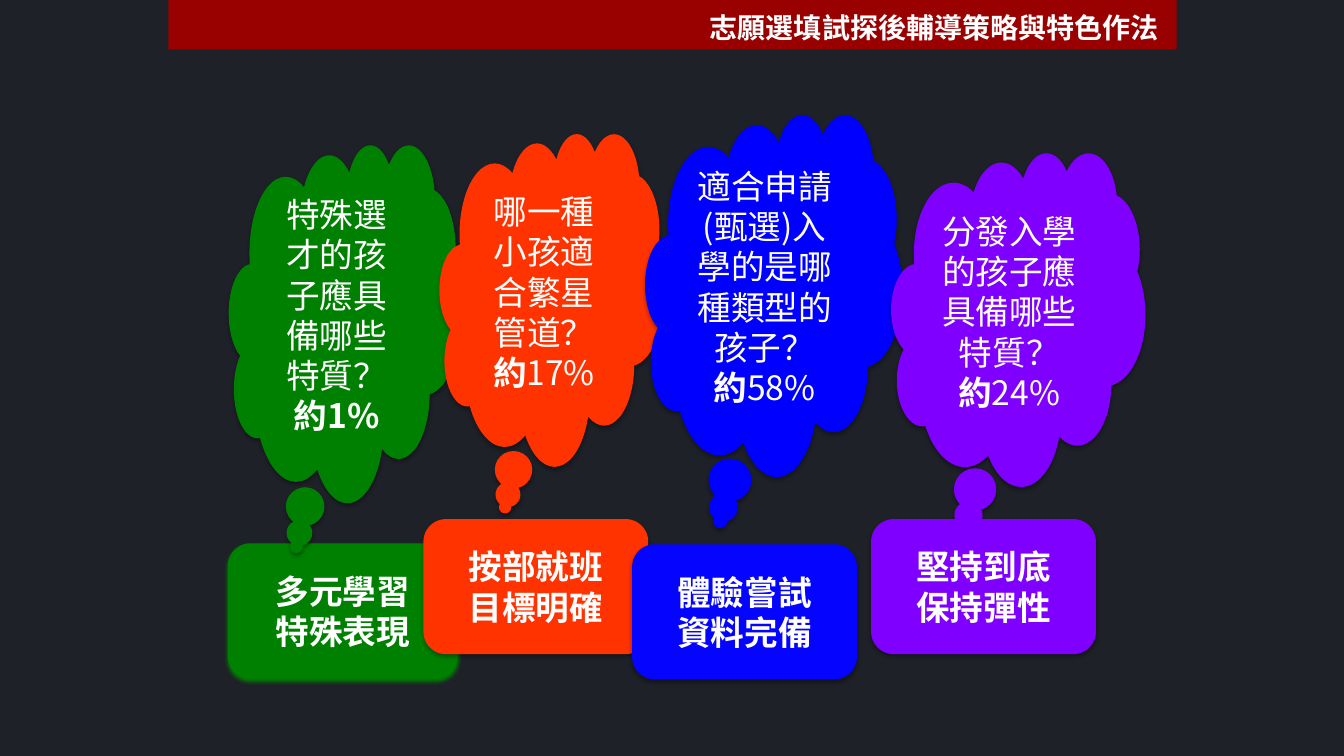
from pptx import Presentation
from pptx.dml.color import RGBColor
from pptx.enum.shapes import MSO_SHAPE
from pptx.enum.text import MSO_ANCHOR, MSO_AUTO_SIZE, PP_ALIGN
from pptx.oxml.ns import qn
from pptx.util import Inches, Pt
from lxml.etree import SubElement

FONT = "Noto Sans CJK SC"
WHITE = "FFFFFF"
BOX_H = 1.34

# fill, cloud box, question, share, share is bold, label left/top/width, label lines, label fill
ROUTES = [
    ("008000", (2.27, 1.43, 2.3, 3.55), "特殊選才的孩子應具備哪些特質？", "1%", True,
     (2.26, 5.39, 2.28), ("多元學習", "特殊表現"), "008000"),
    ("FF3300", (4.36, 1.32, 2.23, 3.3), "哪一種小孩適合繁星管道？", "17%", False,
     (4.2, 5.15, 2.23), ("按部就班", "目標明確"), "FF3300"),
    ("0000FF", (6.4, 1.13, 2.55, 3.59), "適合申請(甄選)入學的是哪種類型的孩子？", "58%", False,
     (6.27, 5.4, 2.23), ("體驗嘗試", "資料完備"), "0505FF"),
    ("8000FF", (8.84, 1.51, 2.52, 3.31), "分發入學的孩子應具備哪些特質？", "24%", False,
     (8.64, 5.15, 2.23), ("堅持到底", "保持彈性"), "8000FF"),
]


def paint(fill, color):
    fill.solid()
    fill.fore_color.rgb = RGBColor.from_string(color)


def write(frame, lines, size=24, align=PP_ALIGN.CENTER):
    """Fill a frame with lines, each a list of (text, bold) runs."""
    frame.word_wrap = True
    frame.vertical_anchor = MSO_ANCHOR.MIDDLE
    for i, line in enumerate(lines):
        para = frame.add_paragraph() if i else frame.paragraphs[0]
        para.alignment = align
        for text, bold in line:
            run = para.add_run()
            run.text = text
            font = run.font
            font.name, font.size, font.bold = FONT, Pt(size), bold
            font.color.rgb = RGBColor.from_string(WHITE)
            SubElement(run._r.get_or_add_rPr(), qn("a:ea"), typeface=FONT)


def shade(shape, color, alpha):
    """Cast a soft shadow straight down."""
    effects = shape._element.spPr.find(qn("a:effectLst"))
    outer = SubElement(effects, qn("a:outerShdw"), blurRad=str(Pt(3.1)),
                       dist=str(Pt(1.8)), dir="5400000", rotWithShape="0")
    tint = SubElement(outer, qn("a:srgbClr"), val=color)
    SubElement(tint, qn("a:alpha"), val=str(alpha * 1000))


def block(slide, kind, box, color):
    shape = slide.shapes.add_shape(kind, *map(Inches, box))
    shape.shadow.inherit = False
    paint(shape.fill, color)
    shape.line.fill.background()
    return shape


def cloud(slide, box, color, ask, share, bold):
    shape = block(slide, MSO_SHAPE.CLOUD_CALLOUT, box, color)
    shade(shape, "000000", 35)
    write(shape.text_frame, [[(ask, False)], [("約", True), (share, bold)]])


def label(slide, spot, color, lines, glow):
    shape = block(slide, MSO_SHAPE.ROUNDED_RECTANGLE, (*spot, BOX_H), color)
    shade(shape, *((color, 100) if glow else ("000000", 35)))
    write(shape.text_frame, [[(line, True)] for line in lines])


def header(slide, box, text):
    left, top, width, height = box
    block(slide, MSO_SHAPE.RECTANGLE, box, "990000")
    title = slide.shapes.title
    title.left, title.top = Inches(left + 5.27), Inches(top + 0.05)
    title.width, title.height = Inches(4.76), Inches(height - 0.05)
    write(title.text_frame, [[(text, True)]], size=20, align=PP_ALIGN.LEFT)
    title.text_frame.auto_size = MSO_AUTO_SIZE.NONE
    slide.shapes._spTree.append(title._element)  # in front of the bar


def main():
    deck = Presentation()
    deck.slide_width, deck.slide_height = Inches(13.33), Inches(7.5)
    slide = deck.slides.add_slide(deck.slide_layouts[5])
    paint(slide.background.fill, "1E2128")
    for i, (color, box, ask, share, bold, spot, lines, fill) in enumerate(ROUTES):
        first = i == 0  # only the first label lies behind its cloud
        if first:
            label(slide, spot, fill, lines, glow=True)
        cloud(slide, box, color, ask, share, bold)
        if not first:
            label(slide, spot, fill, lines, glow=False)
    header(slide, (1.67, 0, 10, 0.49), "志願選填試探後輔導策略與特色作法")
    deck.save("out.pptx")


if __name__ == "__main__":
    main()
